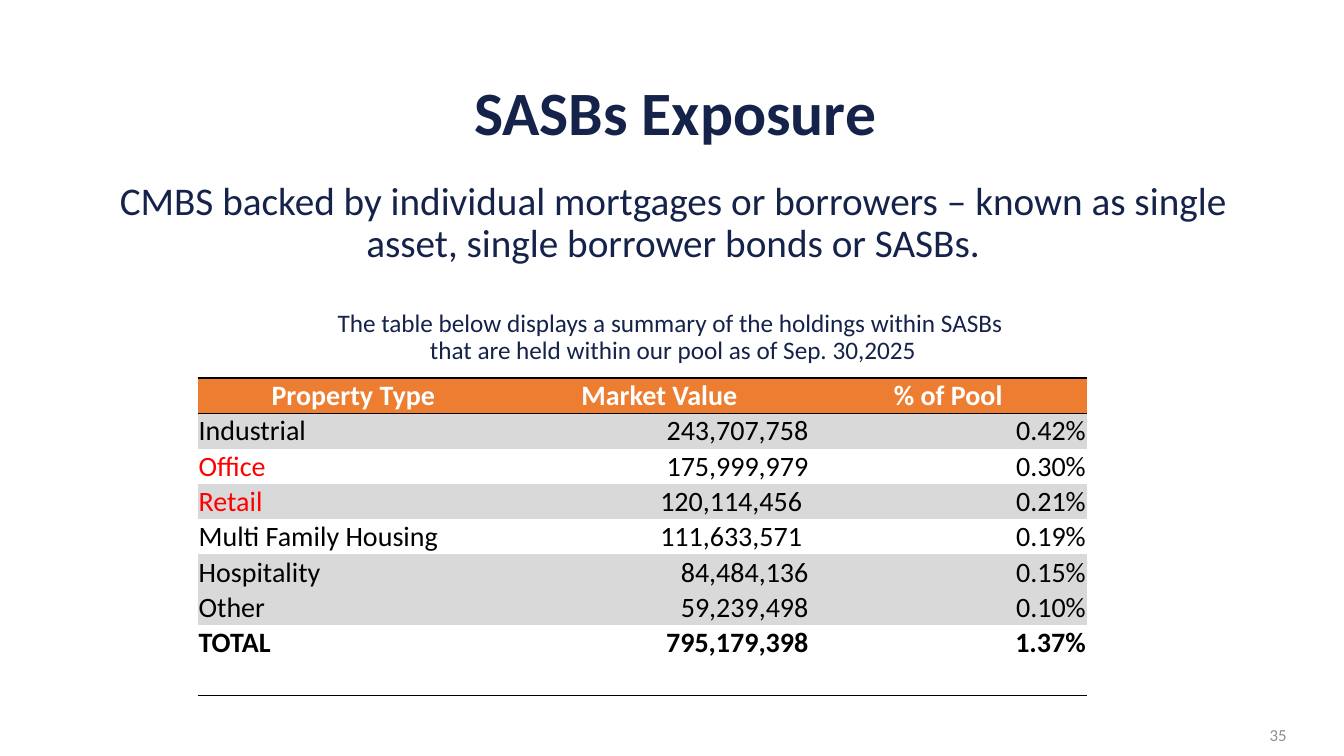
from lxml import etree
from pptx import Presentation
from pptx import util as u
from pptx.dml.color import RGBColor
from pptx.enum import text
from pptx.oxml.ns import qn

NAVY = RGBColor(0x15, 0x23, 0x4A)
ORANGE = RGBColor(0xED, 0x7D, 0x31)
STRIPE = RGBColor(0xD9, 0xD9, 0xD9)
MUTED = RGBColor(0x8C, 0x8D, 0x96)
BLACK = RGBColor(0, 0, 0)
WHITE = RGBColor(0xFF, 0xFF, 0xFF)
RED = RGBColor(0xFF, 0, 0)

LEFT, MID, RIGHT = (text.PP_ALIGN.LEFT, text.PP_ALIGN.CENTER,
                    text.PP_ALIGN.RIGHT)
TOP, CENTER, LOW = (text.MSO_ANCHOR.TOP, text.MSO_ANCHOR.MIDDLE,
                    text.MSO_ANCHOR.BOTTOM)

HEADS = ["Property Type", "Market Value", "% of Pool"]
ROWS = [
    ("Industrial", "243,707,758", "0.42%"),
    ("Office", "175,999,979", "0.30%"),
    ("Retail", "120,114,456 ", "0.21%"),
    ("Multi Family Housing", "111,633,571 ", "0.19%"),
    ("Hospitality", "84,484,136", "0.15%"),
    ("Other", "59,239,498", "0.10%"),
    ("TOTAL", "795,179,398", "1.37%"),
]
GRAY = {"Industrial", "Retail", "Hospitality", "Other"}
ALERT = {"Office", "Retail"}


def apply(item, values):
    for name, value in values.items():
        setattr(item, name, value)


class Deck:
    def __init__(self, wide, high):
        self.prs = Presentation()
        self.prs.slide_width = u.Inches(wide)
        self.prs.slide_height = u.Inches(high)
        self.slide = self.prs.slides.add_slide(self.prs.slide_layouts[6])
        self.font = "Calibri"

    def label(self, para, words, size, color, bold=False, **form):
        apply(para, form)
        run = para.add_run()
        run.text = words
        apply(run.font, {"name": self.font, "size": u.Pt(size), "bold": bold})
        run.font.color.rgb = color

    def box(self, place, lines, anchor=CENTER, inset=0.05):
        shape = self.slide.shapes.add_textbox(*map(u.Inches, place))
        frame = shape.text_frame
        apply(frame, {"word_wrap": True, "vertical_anchor": anchor,
                      "margin_top": u.Inches(inset)})
        for i, line in enumerate(lines):
            para = frame.add_paragraph() if i else frame.paragraphs[0]
            self.label(para, **line)

    def edge(self, cell, sides):
        props = cell._tc.get_or_add_tcPr()
        for side in "LRTB":
            line = etree.SubElement(props, qn("a:ln" + side), w="12700")
            if side in sides:
                fill = etree.SubElement(line, qn("a:solidFill"))
                etree.SubElement(fill, qn("a:srgbClr"), val=str(BLACK))
            else:
                etree.SubElement(line, qn("a:noFill"))

    def cell(self, cell, fill=None, sides=""):
        apply(cell, {"margin_left": u.Inches(0.01),
                     "margin_right": u.Inches(0.01),
                     "margin_top": u.Inches(0.01),
                     "margin_bottom": 0, "vertical_anchor": LOW})
        self.edge(cell, sides)
        if fill is None:
            cell.fill.background()
        else:
            cell.fill.solid()
            cell.fill.fore_color.rgb = fill
        return cell.text_frame.paragraphs[0]

    def table(self, left, top, widths, step):
        count = len(ROWS) + 2
        frame = self.slide.shapes.add_table(
            count, len(widths), u.Inches(left), u.Inches(top),
            u.Inches(sum(widths)), u.Inches(step * count))
        table = frame.table
        apply(table, {"first_row": False, "horz_banding": False})
        for col, width in zip(table.columns, widths):
            col.width = u.Inches(width)
        for row in table.rows:
            row.height = u.Inches(step)

        # Header row
        for c, head in enumerate(HEADS):
            para = self.cell(table.cell(0, c), ORANGE, "TB")
            self.label(para, head, 20, WHITE, True, alignment=MID)

        # Holdings and total
        for r, row in enumerate(ROWS, 1):
            kind = row[0]
            for c, words in enumerate(row):
                para = self.cell(table.cell(r, c),
                                 STRIPE if kind in GRAY else None,
                                 "T" if r == 1 else "")
                color = RED if c == 0 and kind in ALERT else BLACK
                self.label(para, words, 20, color, kind == "TOTAL",
                           alignment=RIGHT if c else LEFT)

        # Closing rule
        for c in range(len(widths)):
            self.cell(table.cell(count - 1, c), sides="B")


def main():
    deck = Deck(13.33, 7.5)
    body = {"color": NAVY, "alignment": MID, "line_spacing": 0.9}

    # Title
    deck.box((0.95, 0.42, 11.5, 1.45),
             [dict(body, words="SASBs Exposure", size=44, bold=True)])

    # Page number
    deck.box((9.86, 7.09, 3, 0.4),
             [dict(words="35", size=12, color=MUTED, alignment=RIGHT)])

    # Definition and table caption
    deck.box((0.7, 1.36, 11.95, 4.32), [
        dict(body, size=28,
             words="CMBS backed by individual mortgages or borrowers – known "
                   "as single asset, single borrower bonds or SASBs."),
        dict(body, size=18, space_before=u.Pt(32),
             words="The table below displays a summary of the holdings "
                   "within SASBs "),
        dict(body, size=18,
             words="that are held within our pool as of Sep. 30,2025"),
    ], TOP, 0.44)

    # Holdings table
    deck.table(1.96, 3.75, [3.09, 2.98, 2.75], 0.35)
    deck.prs.save("out.pptx")


if __name__ == "__main__":
    main()
